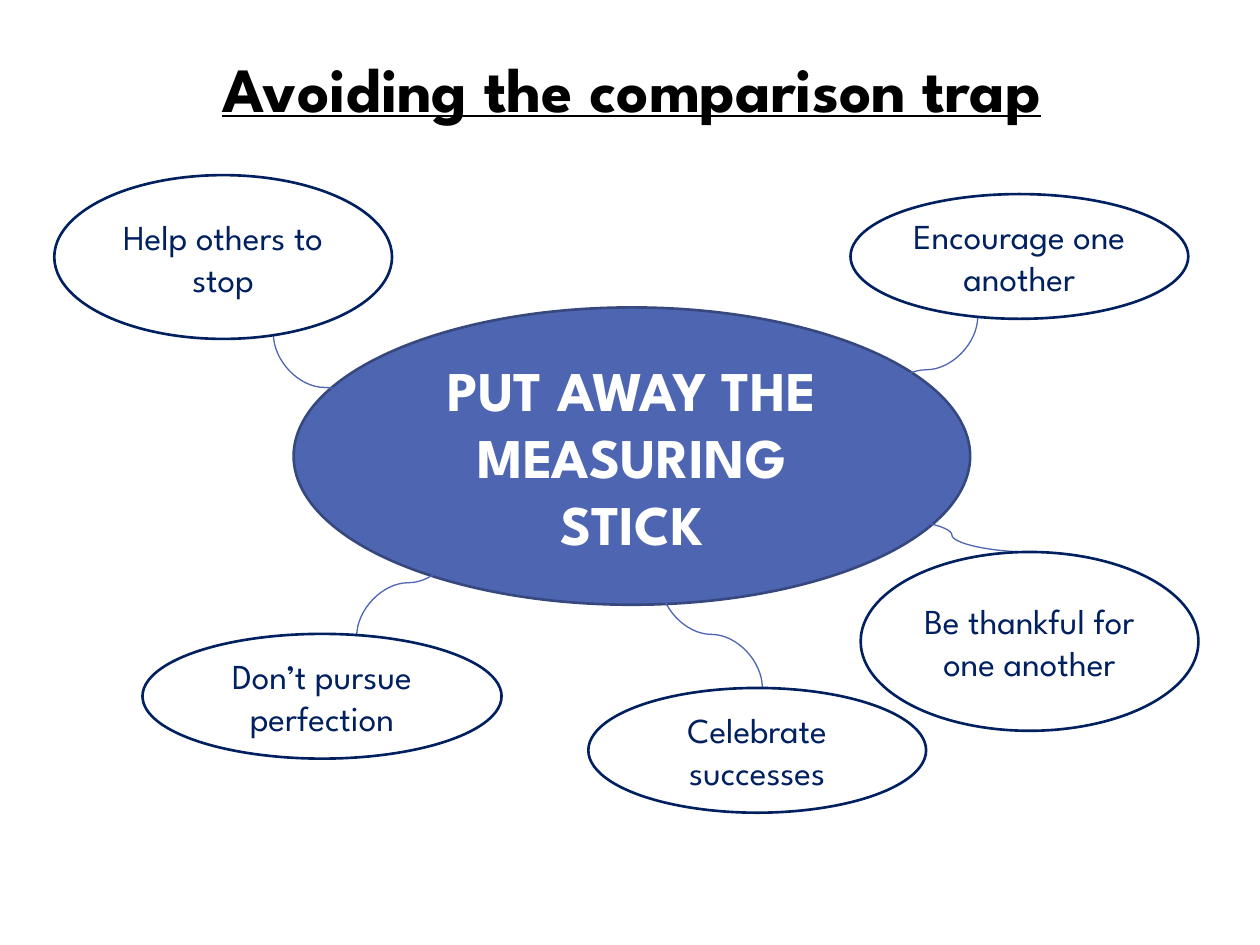
import pptx
import pptx.util
import pptx.dml.color
import pptx.enum.shapes
import pptx.enum.text
import pptx.oxml.ns
import lxml.etree

Pt = pptx.util.Pt
COLORS = {"black": "000000", "white": "FFFFFF", "navy": "002060", "blue": "4E66B2", "edge": "37487E"}
FONT = "League Spartan"

IDEAS = [
    ("Encourage one another", (486, 110.9, 193, 71.3), (499.7, 241.9, 558.7, 180.7), True),
    ("Help others to stop", (31, 100.1, 193, 93.6), (214.6, 252, 156.2, 190.8), True),
    ("Don’t pursue perfection", (81.4, 362.2, 205.2, 71.3), (262.8, 302.4, 203.8, 363.6), True),
    ("Celebrate successes", (336.2, 393.1, 193, 71.3), (377.3, 331.9, 435.6, 393.1), True),
    ("Be thankful for one another", (491.8, 315.4, 193, 102.2), (499.7, 295.9, 588.2, 315.4), False),
]


def rgb(name):
    return pptx.dml.color.RGBColor.from_string(COLORS[name])


def write(sp, text, color, **formats):
    tf = sp.text_frame
    tf.word_wrap = True
    p = tf.paragraphs[0]
    p.alignment = pptx.enum.text.PP_ALIGN.CENTER
    r = p.add_run()
    r.text = text
    r.font.color.rgb = rgb(color)
    for name, value in {"name": FONT, **formats}.items():
        setattr(r.font, name, value)


def add_title(s, text):
    sp = s.shapes.title
    box = {"left": 76.3, "top": 24.5, "width": 569.5, "height": 51.1}
    for name, value in box.items():
        setattr(sp, name, Pt(value))
    write(sp, text, "black", size=Pt(36), bold=True, underline=True)
    sp.text_frame.auto_size = pptx.enum.text.MSO_AUTO_SIZE.NONE
    sp.text_frame.vertical_anchor = pptx.enum.text.MSO_ANCHOR.TOP


def add_ellipse(s, box, line, fill=None):
    sp = s.shapes.add_shape(pptx.enum.shapes.MSO_SHAPE.OVAL, *map(Pt, box))
    sp.shadow.inherit = False
    if fill:
        sp.fill.solid()
        sp.fill.fore_color.rgb = rgb(fill)
    else:
        sp.fill.background()
    sp.line.color.rgb = rgb(line)
    sp.line.width = Pt(1.5)
    return sp


def add_curve(s, ends, upright):
    x1, y1, x2, y2 = ends
    dx, dy = x2 - x1, y2 - y1
    angle = 0
    if upright:
        cx, cy = (x1 + x2) / 2, (y1 + y2) / 2
        turn = 1 if dx * dy < 0 else -1
        angle = 90 if turn == 1 else 270
        dx, dy = turn * dy, -turn * dx
        x1, y1, x2, y2 = cx - dx / 2, cy - dy / 2, cx + dx / 2, cy + dy / 2
    cxn = s.shapes.add_connector(pptx.enum.shapes.MSO_CONNECTOR.CURVE, *map(Pt, (x1, y1, x2, y2)))
    cxn.line.color.rgb = rgb("blue")
    cxn.line.width = Pt(0.75)
    spPr = cxn._element.spPr
    if angle:
        spPr.find(pptx.oxml.ns.qn("a:xfrm")).set("rot", str(angle * 60000))
    lxml.etree.SubElement(spPr, pptx.oxml.ns.qn("a:effectLst"))


def main():
    prs = pptx.Presentation()
    prs.slide_width, prs.slide_height = Pt(720), Pt(540)
    s = prs.slides.add_slide(prs.slide_layouts[5])
    add_title(s, "Avoiding the comparison trap")
    hub = add_ellipse(s, (167.8, 175.7, 386.6, 169.9), "edge", "blue")
    write(hub, "PUT AWAY THE MEASURING STICK", "white", size=Pt(32), bold=True)
    for text, box, ends, upright in IDEAS:
        add_curve(s, ends, upright)
        write(add_ellipse(s, box, "navy"), text, "navy", size=Pt(20))
    prs.save("out.pptx")


if __name__ == "__main__":
    main()
